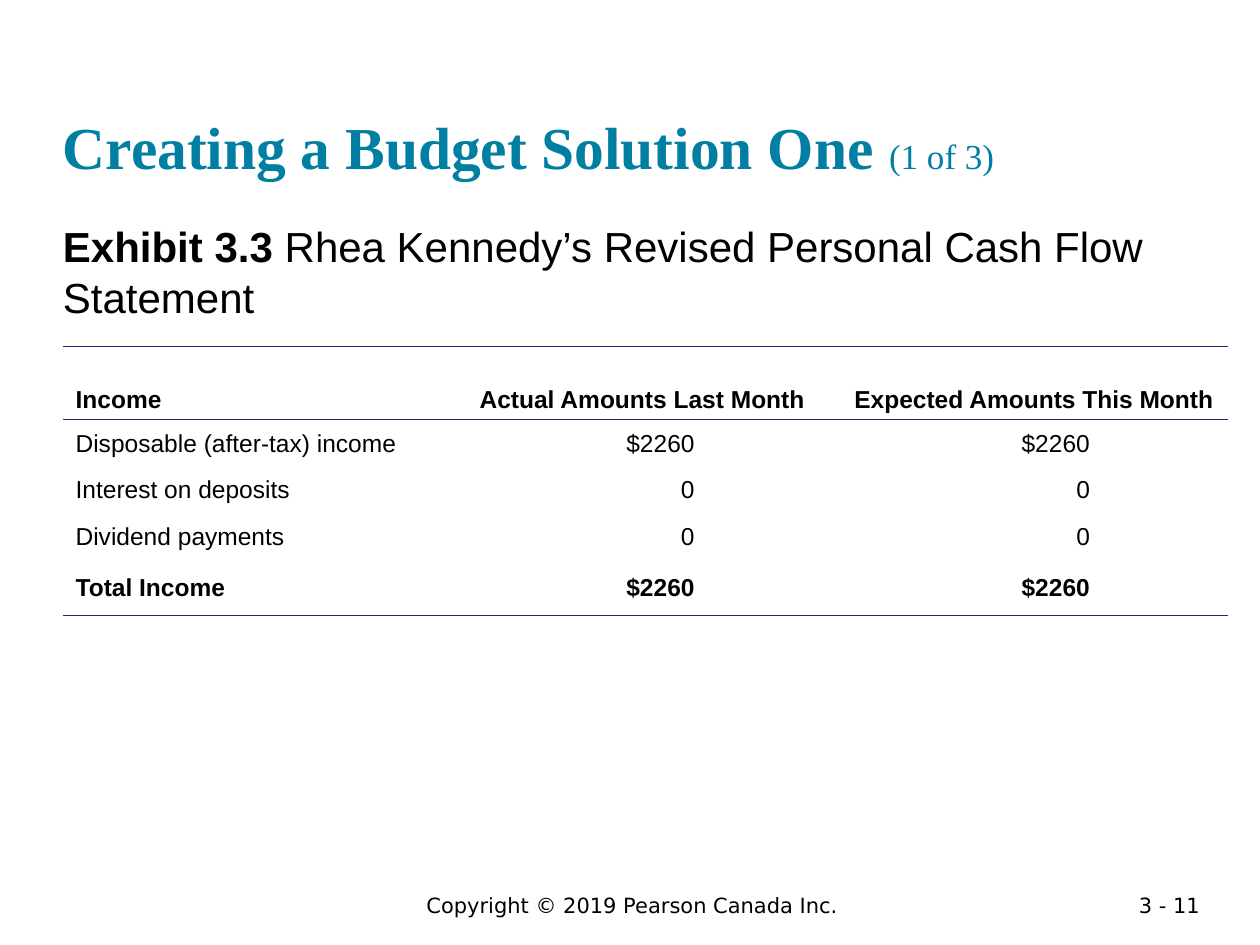
"""Build the budget solution slide with its cash flow table."""
from lxml import etree
from pptx import Presentation
from pptx.dml.color import RGBColor
from pptx.enum.text import MSO_ANCHOR, PP_ALIGN
from pptx.oxml.ns import qn
from pptx.util import Cm, Pt

LEFT, CENTER, RIGHT = PP_ALIGN.LEFT, PP_ALIGN.CENTER, PP_ALIGN.RIGHT
TOP, BOTTOM = MSO_ANCHOR.TOP, MSO_ANCHOR.BOTTOM
BLACK, TEAL, PURPLE = "000000", "007FA3", "3C1581"


def add_run(para, text, size, font, color=BLACK, bold=False):
    span = para.add_run()
    span.text = text
    span.font.size = Pt(size)
    span.font.name = font
    span.font.bold = bold
    span.font.color.rgb = RGBColor.from_string(color)


def set_border(cell, edge, color):
    line = etree.SubElement(cell._tc.get_or_add_tcPr(), qn(f"a:{edge}"))
    if color:
        line.set("w", str(Pt(1)))
        fill = etree.SubElement(line, qn("a:solidFill"))
        etree.SubElement(fill, qn("a:srgbClr")).set("val", color)
    else:
        etree.SubElement(line, qn("a:noFill"))


deck = Presentation()
deck.slide_width, deck.slide_height = Cm(25.4), Cm(19.05)
page = deck.slides.add_slide(deck.slide_layouts[6])

title = [("Creating a Budget Solution One ", 34, "Times New Roman", TEAL, True),
         ("(1 of 3)", 20, "Times New Roman", TEAL)]
caption = [("Exhibit 3.3 ", 24, "Arial", BLACK, True),
           ("Rhea Kennedy’s Revised Personal Cash Flow Statement", 24, "Arial")]
copyright_line = [("Copyright © 2019 Pearson Canada Inc.", 12, "DejaVu Sans")]
page_number = [("3 - 11", 12, "DejaVu Sans")]

texts = [
    (1.27, 0.61, 22.86, 3.05, LEFT, BOTTOM, False, title),
    (1.27, 4.45, 22.86, 2.1, LEFT, TOP, False, caption),
    (4.17, 17.86, 17.15, 0.76, CENTER, TOP, True, copyright_line),
    (21.9, 17.86, 2.54, 0.56, RIGHT, TOP, True, page_number),
]
for left, top, width, height, align, anchor, padded, runs in texts:
    box = page.shapes.add_textbox(Cm(left), Cm(top), Cm(width), Cm(height))
    frame = box.text_frame
    frame.word_wrap = True
    frame.vertical_anchor = anchor
    if not padded:
        frame.margin_left = frame.margin_right = Cm(0)
        frame.margin_top = frame.margin_bottom = Cm(0)
    para = frame.paragraphs[0]
    para.alignment = align
    for run in runs:
        add_run(para, *run)

rows = [
    ("Income", "Actual Amounts Last Month ", "Expected Amounts This Month"),
    ("Disposable (after-tax) income", "$2260 ", "$2260"),
    ("Interest on deposits", "0 ", "0"),
    ("Dividend payments", "0 ", "0"),
    ("Total Income", "$2260 ", "$2260"),
]
row_heights = [1.48, 0.9, 0.9, 1.04, 1.04]
last = len(rows) - 1
table = page.shapes.add_table(len(rows), 3, Cm(1.27), Cm(6.98), Cm(23.49),
                              Cm(sum(row_heights))).table
table.first_row = table.horz_banding = False
for column in table.columns:
    column.width = Cm(7.83)

for r, (values, height) in enumerate(zip(rows, row_heights)):
    table.rows[r].height = Cm(height)
    for c, value in enumerate(values):
        cell = table.cell(r, c)
        set_border(cell, "lnL", None)
        set_border(cell, "lnR", None)
        set_border(cell, "lnT", PURPLE if r in (0, 1) else None)
        set_border(cell, "lnB", PURPLE if r in (0, last) else None)
        cell.fill.background()
        cell.vertical_anchor = BOTTOM if r == 0 else TOP
        para = cell.text_frame.paragraphs[0]
        para.line_spacing = 1.15
        if c and r:
            para.alignment = RIGHT
            cell.margin_right = Cm(2.79)
        else:
            para.alignment = CENTER if c else LEFT
        add_run(para, value, 14, "Arial", bold=r in (0, last))

deck.save("out.pptx")
